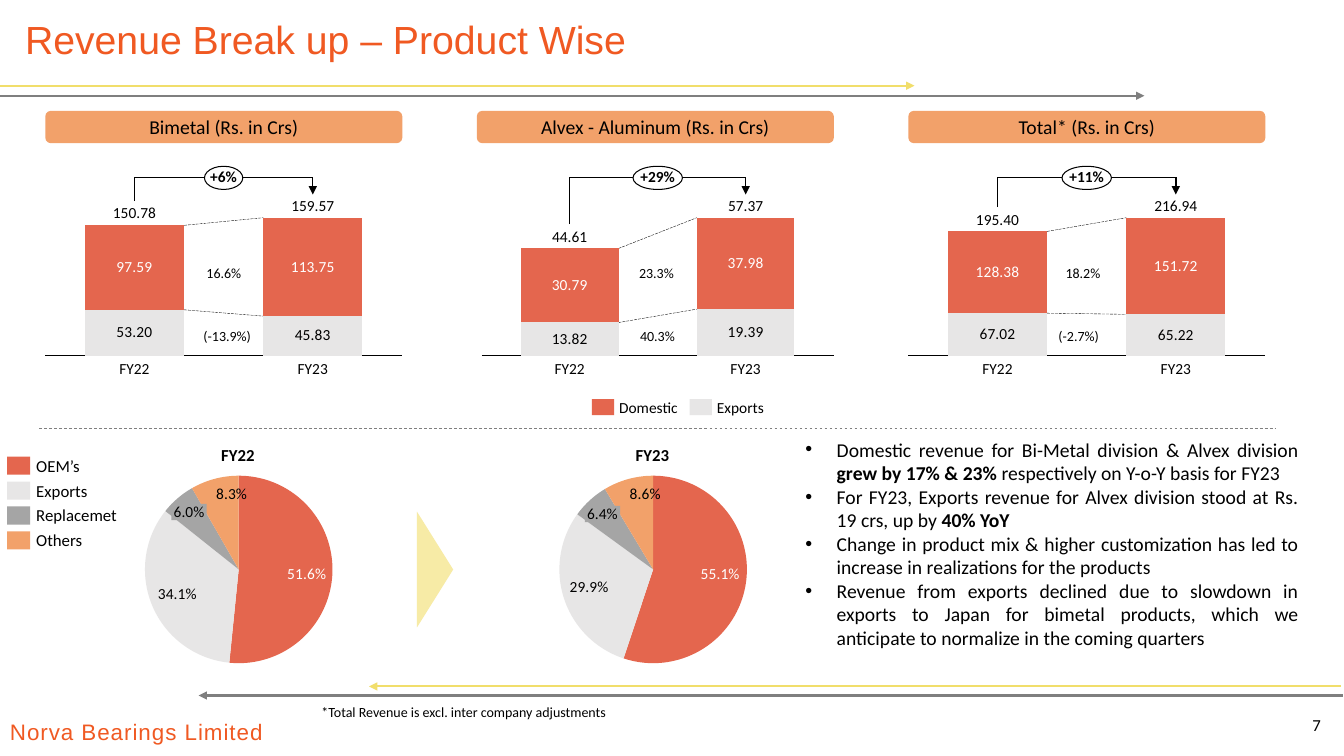
from lxml.etree import SubElement
from pptx import Presentation
from pptx.chart.data import CategoryChartData
from pptx.dml.color import RGBColor
from pptx.enum.chart import XL_CHART_TYPE, XL_LABEL_POSITION, XL_TICK_LABEL_POSITION, XL_TICK_MARK
from pptx.enum.dml import MSO_LINE
from pptx.enum.shapes import MSO_CONNECTOR, MSO_SHAPE
from pptx.enum.text import MSO_ANCHOR, PP_ALIGN
from pptx.oxml.ns import qn
from pptx.util import Inches, Pt

BLACK = RGBColor(0, 0, 0)
WHITE = RGBColor(255, 255, 255)
ORANGE_TEXT = RGBColor(0xF0, 0x59, 0x22)
RED = RGBColor(0xE4, 0x66, 0x4E)
LIGHT_GREY = RGBColor(0xE7, 0xE6, 0xE6)
MID_GREY = RGBColor(0xA5, 0xA5, 0xA5)
DARK_GREY = RGBColor(0x7F, 0x7F, 0x7F)
PEACH = RGBColor(0xF2, 0xA1, 0x6A)
YELLOW = RGBColor(0xF1, 0xDE, 0x6B)
PALE_YELLOW = RGBColor(0xF7, 0xEB, 0xA6)

prs = Presentation()
prs.slide_width, prs.slide_height = Inches(13.33), Inches(7.5)
slide = prs.slides.add_slide(prs.slide_layouts[6])
shapes = slide.shapes


def add_text(left, top, width, height, text="", size=11, align=PP_ALIGN.LEFT, anchor=MSO_ANCHOR.TOP,
             tight=False, bold=False, color=BLACK, font="Calibri", kind=None, fill=None, outline=None):
    """Add a text box, or a filled preset shape if kind is given; tight drops margins and wrapping."""
    box = Inches(left), Inches(top), Inches(width), Inches(height)
    if kind is None:
        shape = shapes.add_textbox(*box)
    else:
        shape = shapes.add_shape(kind, *box)
        shape.shadow.inherit = False
        shape.fill.solid()
        shape.fill.fore_color.rgb = fill
        if outline is None:
            shape.line.fill.background()
        else:
            shape.line.color.rgb = outline
            shape.line.width = Pt(0.75)
    frame = shape.text_frame
    frame.word_wrap = not tight
    frame.vertical_anchor = anchor
    paragraph = frame.paragraphs[0]
    if tight:
        frame.margin_left = frame.margin_right = frame.margin_top = frame.margin_bottom = 0
        paragraph.line_spacing = 0.9
    if text:
        paragraph.text = text
        paragraph.alignment = align
        paragraph.font.size = Pt(size)
        paragraph.font.bold = bold
        paragraph.font.name = font
        paragraph.font.color.rgb = color
    return shape


def add_line(x1, y1, x2, y2, color=BLACK, width=1.0, dash=None, arrow=False):
    line = shapes.add_connector(MSO_CONNECTOR.STRAIGHT, Inches(x1), Inches(y1), Inches(x2), Inches(y2))
    line.line.color.rgb = color
    line.line.width = Pt(width)
    if dash is not None:
        line.line.dash_style = dash
    properties = line._element.spPr
    if arrow:
        SubElement(properties.find(qn("a:ln")), qn("a:tailEnd"), type="triangle")
    SubElement(properties, qn("a:effectLst"))


# Header and footer
add_line(13.32, 6.9, 1.97, 6.9, DARK_GREY, 1.5, arrow=True)
add_line(13.3, 6.81, 3.66, 6.81, YELLOW, 1.5, arrow=True)
add_line(-0.02, 0.85, 9.07, 0.85, YELLOW, 1.5, arrow=True)
add_line(0, 0.95, 11.35, 0.95, DARK_GREY, 1.5, arrow=True)
company = add_text(0, 7.08, 2.99, 0.37, "Norva Bearings Limited", 16, color=ORANGE_TEXT, font="Arial")
company.text_frame.paragraphs[0].runs[0].font._element.set("spc", "70")
title = add_text(0.15, 0.14, 8.31, 0.54, "Revenue Break up – Product Wise", 28,
                 anchor=MSO_ANCHOR.MIDDLE, color=ORANGE_TEXT, font="Arial")
title.text_frame.paragraphs[0].line_spacing = 0.9
add_text(3.09, 6.93, 7.15, 0.27, "*Total Revenue is excl. inter company adjustments", 10)
add_text(12.77, 6.99, 0.43, 0.4, "7", 12, PP_ALIGN.RIGHT, MSO_ANCHOR.MIDDLE)

# Stacked columns: name, chart left and width, exports, domestic, totals, growth and its
# oval width, then domestic and exports change with their left edges
panels = [
    ("Bimetal (Rs. in Crs)", 0.36, 3.72, (53.20, 45.83), (97.59, 113.75), ("150.78", "159.57"),
     "+6%", 0.38, ("16.6%", 1.95), ("(-13.9%)", 1.92)),
    ("Alvex - Aluminum (Rs. in Crs)", 4.69, 3.67, (13.82, 19.39), (30.79, 37.98), ("44.61", "57.37"),
     "+29%", 0.49, ("23.3%", 6.24), ("40.3%", 6.25)),
    ("Total* (Rs. in Crs)", 8.92, 3.72, (67.02, 65.22), (128.38, 151.72), ("195.40", "216.94"),
     "+11%", 0.49, ("18.2%", 10.47), ("(-2.7%)", 10.4)),
]
years = ("FY22", "FY23")
chart_top, chart_height = 2.07, 1.55
plot_top, plot_height = 2.16, 1.37
bracket_y = 1.76
gap_width = 80
charts = []

for i, (name, left, width, exports, domestic, totals, growth, oval_width, *changes) in enumerate(panels):
    add_text(0.45 + 4.28 * i, 1.1, 3.54, 0.32, name, 14, PP_ALIGN.CENTER, MSO_ANCHOR.MIDDLE,
             kind=MSO_SHAPE.ROUNDED_RECTANGLE, fill=PEACH)
    scale_max = float(totals[1])
    category_width = width * 0.951 / 2
    bar_half = category_width / (1 + gap_width / 100) / 2
    centers = [left + width * 0.024 + category_width * (n + 0.5) for n in range(2)]
    bar_tops = [plot_top + plot_height * (1 - float(total) / scale_max) for total in totals]
    export_tops = [plot_top + plot_height * (1 - value / scale_max) for value in exports]
    for start_y, end_y in (bar_tops, export_tops):
        add_line(centers[0] + bar_half, start_y, centers[1] - bar_half, end_y, width=0.25, dash=MSO_LINE.LONG_DASH)

    data = CategoryChartData(number_format="0.00")
    data.categories = years
    data.add_series("Exports", exports)
    data.add_series("Domestic", domestic)
    chart = shapes.add_chart(XL_CHART_TYPE.COLUMN_STACKED, Inches(left), Inches(chart_top),
                             Inches(width), Inches(chart_height), data).chart
    charts.append((chart, (0.024, 0.058, 0.951, 0.883)))
    columns = chart.plots[0]
    columns.gap_width, columns.overlap = gap_width, 100
    chart.value_axis.minimum_scale, chart.value_axis.maximum_scale = 0, scale_max
    chart.value_axis.has_major_gridlines = False
    chart.value_axis.visible = False
    axis = chart.category_axis
    axis.tick_label_position = XL_TICK_LABEL_POSITION.NONE
    axis.major_tick_mark = axis.minor_tick_mark = XL_TICK_MARK.NONE
    axis.format.line.color.rgb = BLACK
    axis.format.line.width = Pt(0.75)
    for series, fill, label_color in zip(columns.series, (LIGHT_GREY, RED), (BLACK, WHITE)):
        series.format.fill.solid()
        series.format.fill.fore_color.rgb = fill
        labels = series.data_labels
        labels.show_value = True
        labels.number_format, labels.number_format_is_linked = "0.00", False
        labels.position = XL_LABEL_POSITION.CENTER
        labels.font.size = Pt(11)
        labels.font.color.rgb = label_color

    add_line(centers[0], bar_tops[0] - 0.24, centers[0], bracket_y)
    add_line(centers[0], bracket_y, centers[1], bracket_y)
    add_line(centers[1], bracket_y, centers[1], 1.93, arrow=True)
    for center, bar_top, total, year in zip(centers, bar_tops, totals, years):
        add_text(center - 0.2, 3.58, 0.4, 0.16, year, align=PP_ALIGN.CENTER, tight=True)
        add_text(center - 0.27, bar_top - 0.19, 0.54, 0.16, total, align=PP_ALIGN.CENTER,
                 anchor=MSO_ANCHOR.BOTTOM, tight=True)
    add_text(sum(centers) / 2 - oval_width / 2, 1.65, oval_width, 0.23, growth, align=PP_ALIGN.CENTER,
             anchor=MSO_ANCHOR.MIDDLE, tight=True, bold=True, kind=MSO_SHAPE.OVAL, fill=WHITE, outline=BLACK)
    for (change, change_left), change_top in zip(changes, (2.58, 3.2)):
        add_text(change_left, change_top, 0.77, 0.27, change, 10)

for key_left, fill, label in ((5.87, RED, "Domestic"), (6.84, LIGHT_GREY, "Exports")):
    add_text(key_left, 3.96, 0.22, 0.16, kind=MSO_SHAPE.RECTANGLE, fill=fill)
    add_text(key_left + 0.27, 3.97, 0.69, 0.16, label, anchor=MSO_ANCHOR.MIDDLE, tight=True)

add_line(0.39, 4.25, 12.66, 4.25, DARK_GREY, 0.5, MSO_LINE.DASH)

# Pies of the customer mix
segments = (("OEM’s", RED), ("Exports", LIGHT_GREY), ("Replacemet", MID_GREY), ("Others", PEACH))
for row, (label, fill) in enumerate(segments):
    key_top = 4.53 + 0.247 * row
    add_text(0.07, key_top, 0.23, 0.18, kind=MSO_SHAPE.RECTANGLE, fill=fill)
    add_text(0.36, key_top + 0.01, 1.0, 0.18, label, 12, anchor=MSO_ANCHOR.MIDDLE, tight=True)

percent = '0.0"%"'
pies = ((0.93, (51.6, 34.1, 6.0, 8.3), 1.7, 5.0), (5.04, (55.1, 29.9, 6.4, 8.6), 5.8, 5.02))
for year, (left, shares, tag_left, tag_top) in zip(years, pies):
    data = CategoryChartData(number_format=percent)
    data.categories = [label for label, _ in segments]
    data.add_series(year, shares)
    chart = shapes.add_chart(XL_CHART_TYPE.PIE, Inches(left), Inches(4.63), Inches(2.9), Inches(2.04), data).chart
    charts.append((chart, (0.175, 0.044, 0.642, 0.912)))
    series = chart.plots[0].series[0]
    for n, (_, fill) in enumerate(segments):
        point = series.points[n]
        point.format.fill.solid()
        point.format.fill.fore_color.rgb = fill
        if n != 2:
            point.data_label.font.size = Pt(11)
            point.data_label.font.color.rgb = WHITE if n == 0 else BLACK
            point.data_label.position = XL_LABEL_POSITION.INSIDE_END
    series.data_labels.number_format = percent
    series.data_labels.number_format_is_linked = False
    series.data_labels.show_value = False
    add_text(tag_left, tag_top, 0.35, 0.16, f"{shares[2]:.1f}%", align=PP_ALIGN.CENTER,
             anchor=MSO_ANCHOR.MIDDLE, tight=True, kind=MSO_SHAPE.RECTANGLE, fill=MID_GREY)
    add_text(left + 0.98, 4.36, 0.9, 0.3, year, 12, PP_ALIGN.CENTER, bold=True)

pointer = add_text(3.74, 5.47, 1.15, 0.36, kind=MSO_SHAPE.ISOSCELES_TRIANGLE, fill=PALE_YELLOW)
pointer.rotation = 90

for chart, plot_box in charts:
    chart.has_title = chart.has_legend = False
    chart.plots[0].vary_by_categories = False
    chart.font.size = Pt(10)
    chart.font.name = "Calibri"
    chart.font.color.rgb = BLACK
    plot_area = chart._chartSpace.chart.plotArea
    for old_layout in plot_area.findall(qn("c:layout")):
        plot_area.remove(old_layout)
    layout = SubElement(plot_area, qn("c:layout"))
    plot_area.insert(0, layout)
    manual = SubElement(layout, qn("c:manualLayout"))
    settings = [("layoutTarget", "inner"), ("xMode", "edge"), ("yMode", "edge"), *zip("xywh", plot_box)]
    for tag, value in settings:
        SubElement(manual, qn(f"c:{tag}"), val=str(value))

# Commentary: each bullet is a list of (text, bold) runs
comments = [
    [("Domestic revenue for Bi-Metal division & Alvex division ", False), ("grew by 17% & 23% ", True),
     ("respectively on Y-o-Y basis for FY23", False)],
    [("For FY23, Exports revenue for Alvex division stood at Rs. 19 crs, up by ", False), ("40% YoY", True)],
    [("Change in product mix & higher customization has led to increase in realizations for the products", False)],
    [("Revenue from exports declined due to slowdown in exports to Japan for bimetal products, "
      "which we anticipate to normalize in the coming quarters", False)],
]
commentary = add_text(7.89, 4.29, 5.09, 2.22).text_frame
for n, comment in enumerate(comments):
    paragraph = commentary.add_paragraph() if n else commentary.paragraphs[0]
    bullet = paragraph._p.get_or_add_pPr()
    bullet.set("marL", str(Inches(0.31)))
    bullet.set("indent", str(-Inches(0.31)))
    SubElement(bullet, qn("a:buFont"), typeface="Arial")
    SubElement(bullet, qn("a:buChar"), char="•")
    paragraph.alignment = PP_ALIGN.JUSTIFY
    paragraph.font.size = Pt(14)
    paragraph.font.name = "Calibri"
    paragraph.font.color.rgb = BLACK
    for text, bold in comment:
        run = paragraph.add_run()
        run.text = text
        run.font.bold = bold

prs.save("out.pptx")
